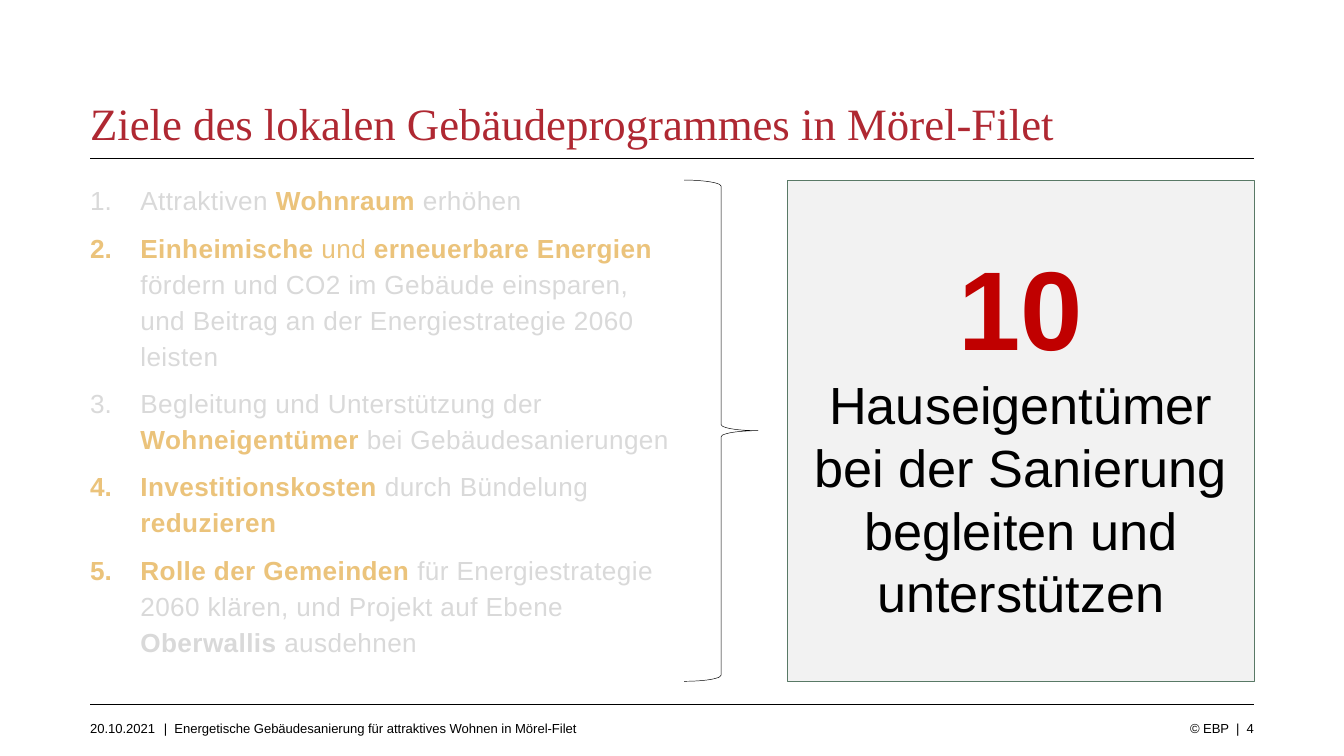
from lxml import etree
from pptx import Presentation
from pptx.dml.color import RGBColor
from pptx.enum import shapes, text
from pptx.oxml.ns import qn
from pptx.util import Inches, Pt

THEME = {
    "title": "AF2832", "ink": "000000", "muted": "D9D9D9", "accent": "EBC37B",
    "number": "C00000", "panel": "F2F2F2", "panel_line": "597966",
    "serif": "Times New Roman", "sans": "Arial",
    "title_size": 24, "body_size": 14, "footer_size": 7,
    "number_size": 60, "message_size": 28, "hairline": 0.25,
}

TITLE = "Ziele des lokalen Gebäudeprogrammes in Mörel-Filet"
GOALS = [
    [("Attraktiven ", "muted", False), ("Wohnraum ", "accent", True),
     ("erhöhen", "muted", False)],
    [("Einheimische", "accent", True), (" und ", "accent", False),
     ("erneuerbare Energien ", "accent", True),
     ("fördern und CO2 im Gebäude einsparen, und Beitrag an der "
      "Energiestrategie 2060 leisten", "muted", False)],
    [("Begleitung und Unterstützung der ", "muted", False),
     ("Wohneigentümer", "accent", True),
     (" bei Gebäudesanierungen", "muted", False)],
    [("Investitionskosten", "accent", True),
     (" durch Bündelung ", "muted", False), ("reduzieren", "accent", True)],
    [("Rolle der Gemeinden ", "accent", True),
     ("für Energiestrategie 2060 klären, und Projekt auf Ebene ", "muted", False),
     ("Oberwallis", "muted", True), (" ausdehnen", "muted", False)],
]
MESSAGE = [
    ("10", "number_size", "number", True),
    (" ", "message_size", "number", True),
    ("Hauseigentümer bei der Sanierung begleiten und unterstützen",
     "message_size", "ink", False),
]
LEFT, RIGHT = 0.67, 9.33
TOP, HEIGHT = 1.34, 3.73
INDENT = Pt(27)
RULES = [1.18, 5.24]
FOOTER_TOP, FOOTER_HEIGHT = 5.36, 0.16
FOOTERS = [
    ("20.10.2021", LEFT, 0.51, text.PP_ALIGN.LEFT),
    ("|  Energetische Gebäudesanierung für attraktives Wohnen in Mörel-Filet",
     1.22, 3.94, text.PP_ALIGN.LEFT),
    ("© EBP  |  4", RIGHT - 1.18, 1.18, text.PP_ALIGN.RIGHT),
]


def color(name):
    return RGBColor.from_string(THEME[name])


def add_run(p, words, size, ink, bold=False, font="sans"):
    r = p.add_run()
    r.text = words
    r.font.name = THEME[font]
    r.font.size = Pt(THEME[size])
    r.font.bold = bold
    r.font.color.rgb = color(ink)
    return r


def add_text(slide, left, top, width, height):
    tf = slide.shapes.add_textbox(*map(Inches, (left, top, width, height))).text_frame
    tf.margin_left = tf.margin_right = tf.margin_top = tf.margin_bottom = 0
    tf.word_wrap = True
    return tf


def add_outline(slide, kind, left, right, line):
    sp = slide.shapes.add_shape(kind, *map(Inches, (left, TOP, right - left, HEIGHT)))
    sp.shadow.inherit = False
    sp.fill.background()
    sp.line.color.rgb = color(line)
    sp.line.width = Pt(THEME["hairline"])
    return sp


def add_rule(slide, y):
    rule = slide.shapes.add_connector(
        shapes.MSO_CONNECTOR.STRAIGHT, *map(Inches, (LEFT, y, RIGHT, y)))
    rule.line.color.rgb = color("ink")
    rule.line.width = Pt(THEME["hairline"])
    etree.SubElement(rule._element.spPr, qn("a:effectLst"))


def add_goals(slide):
    tf = add_text(slide, LEFT, TOP, 4.33, HEIGHT)
    for i, goal in enumerate(GOALS):
        p = tf.paragraphs[0] if i == 0 else tf.add_paragraph()
        p.line_spacing = 1.15
        p.space_after = Pt(6)
        pPr = p._p.get_or_add_pPr()
        pPr.set("marL", str(int(INDENT)))
        pPr.set("indent", str(-int(INDENT)))
        etree.SubElement(pPr, qn("a:buFont"), typeface=THEME["sans"])
        etree.SubElement(pPr, qn("a:buAutoNum"), type="arabicPeriod")
        for words, ink, bold in goal:
            r = add_run(p, words, "body_size", ink, bold)
            r._r.get_or_add_rPr().set("spc", "20")


def add_message(slide):
    panel = add_outline(slide, shapes.MSO_SHAPE.RECTANGLE, 5.86, RIGHT, "panel_line")
    panel.fill.solid()
    panel.fill.fore_color.rgb = color("panel")
    tf = panel.text_frame
    tf.word_wrap = True
    tf.vertical_anchor = text.MSO_ANCHOR.MIDDLE
    p = tf.paragraphs[0]
    p.alignment = text.PP_ALIGN.CENTER
    for run in MESSAGE:
        add_run(p, *run)


def main():
    prs = Presentation()
    prs.slide_width = Inches(10)
    prs.slide_height = prs.slide_width * 9 // 16
    slide = prs.slides.add_slide(prs.slide_layouts[6])
    for y in RULES:
        add_rule(slide, y)
    p = add_text(slide, LEFT, 0.78, 7.88, 0.35).paragraphs[0]
    p.line_spacing = Pt(24)
    add_run(p, TITLE, "title_size", "title", font="serif")
    add_goals(slide)
    for words, left, width, align in FOOTERS:
        p = add_text(slide, left, FOOTER_TOP, width, FOOTER_HEIGHT).paragraphs[0]
        p.alignment = align
        add_run(p, words, "footer_size", "ink")
    add_outline(slide, shapes.MSO_SHAPE.RIGHT_BRACE, 5.09, 5.64, "ink")
    add_message(slide)
    prs.save("out.pptx")


if __name__ == "__main__":
    main()
